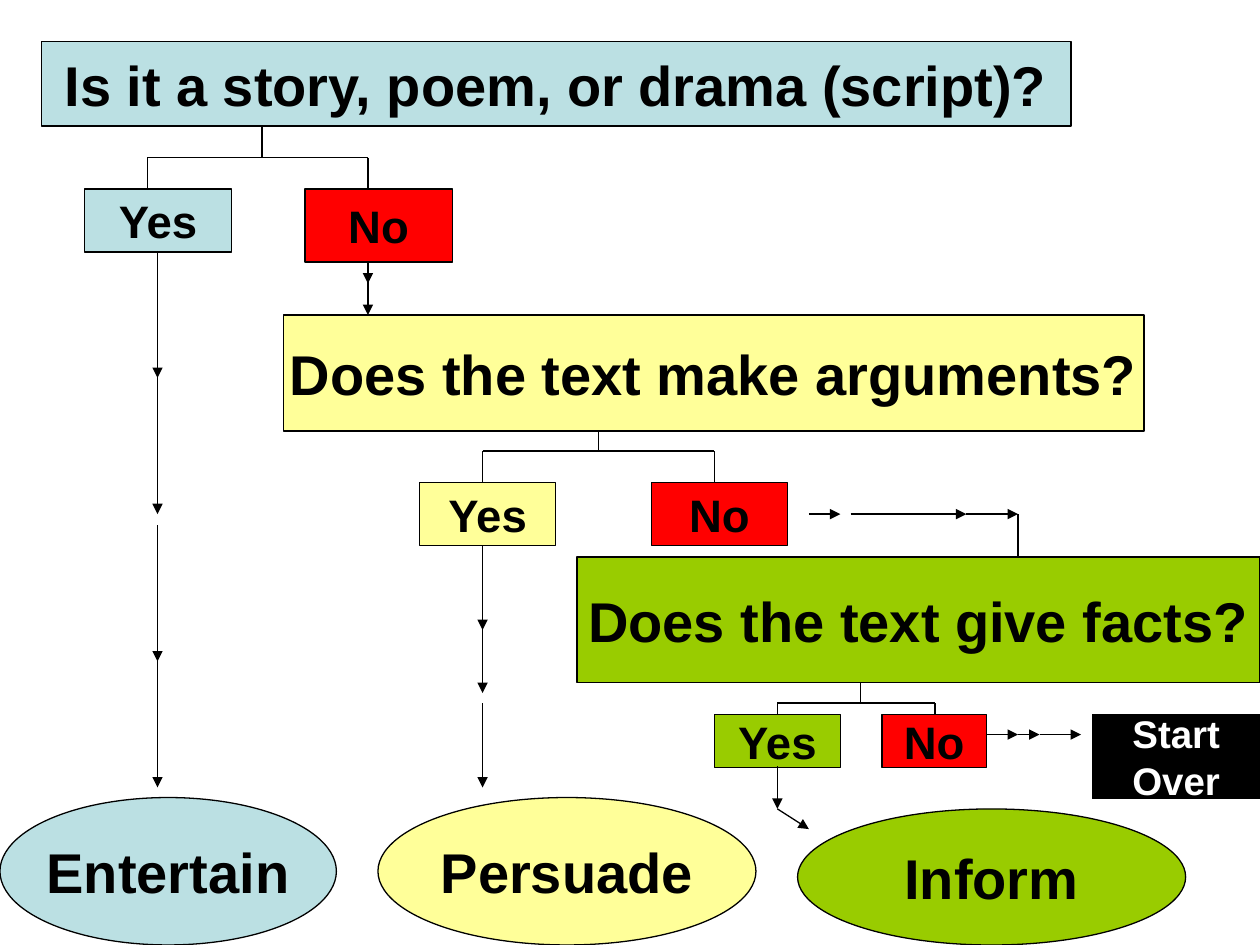
from lxml import etree
from pptx import Presentation
from pptx.dml.color import RGBColor
from pptx.enum.shapes import MSO_CONNECTOR, MSO_SHAPE
from pptx.enum.text import MSO_ANCHOR, PP_ALIGN
from pptx.oxml.ns import qn
from pptx.util import Inches, Pt

BLUE, YELLOW, GREEN, RED = "BBE0E3", "FFFF99", "99CC00", "FF0000"
BLACK, WHITE = "000000", "FFFFFF"
RECT, OVAL = MSO_SHAPE.RECTANGLE, MSO_SHAPE.OVAL


def color(code):
    return RGBColor.from_string(code)


def link(x1, y1, x2, y2, arrow=False):
    line = slide.shapes.add_connector(
        MSO_CONNECTOR.STRAIGHT, Inches(x1), Inches(y1), Inches(x2), Inches(y2))
    line.line.color.rgb = color(BLACK)
    line.line.width = Pt(0.75)
    if arrow:
        etree.SubElement(line.line._get_or_add_ln(), qn("a:tailEnd"), type="triangle")
    etree.SubElement(line._element.spPr, qn("a:effectLst"))


prs = Presentation()
prs.slide_width, prs.slide_height = Inches(10), Inches(7.5)
slide = prs.slides.add_slide(prs.slide_layouts[6])

# Questions, answers and outcomes: kind, fill, size, place, lines of text
boxes = [
    (RECT, BLUE, 32, (0.33, 0.33, 8.17, 0.67), ["Is it a story, poem, or drama (script)?"]),
    (RECT, BLUE, 26, (0.67, 1.5, 1.17, 0.5), ["Yes"]),
    (RECT, RED, 26, (2.42, 1.5, 1.17, 0.58), ["No"]),
    (RECT, YELLOW, 32, (2.25, 2.5, 6.83, 0.92), ["Does the text make arguments?"]),
    (RECT, YELLOW, 26, (3.33, 3.83, 1.08, 0.5), ["Yes"]),
    (RECT, RED, 26, (5.17, 3.83, 1.08, 0.5), ["No"]),
    (RECT, GREEN, 32, (4.58, 4.42, 5.42, 1), ["Does the text give facts?"]),
    (RECT, GREEN, 26, (5.67, 5.67, 1, 0.42), ["Yes"]),
    (RECT, RED, 26, (7, 5.67, 0.83, 0.42), ["No"]),
    (RECT, BLACK, 22, (8.67, 5.67, 1.33, 0.67), ["Start", "Over"]),
    (OVAL, BLUE, 32, (0, 6.33, 2.67, 1.17), ["Entertain"]),
    (OVAL, YELLOW, 32, (3, 6.33, 3, 1.17), ["Persuade"]),
    (OVAL, GREEN, 32, (6.33, 6.42, 3.08, 1.08), ["Inform"]),
]
for kind, fill, size, place, words in boxes:
    box = slide.shapes.add_shape(kind, *[Inches(n) for n in place])
    box.shadow.inherit = False
    box.fill.solid()
    box.fill.fore_color.rgb = color(fill)
    box.line.color.rgb = color(BLACK)
    box.line.width = Pt(0.75)
    frame = box.text_frame
    frame.word_wrap = False
    frame.vertical_anchor = MSO_ANCHOR.MIDDLE
    for i, word in enumerate(words):
        para = frame.add_paragraph() if i else frame.paragraphs[0]
        para.alignment = PP_ALIGN.CENTER
        run = para.add_run()
        run.text = word
        run.font.name = "Arial"
        run.font.size = Pt(size)
        run.font.bold = True
        run.font.color.rgb = color(WHITE if fill == BLACK else BLACK)

# Forks from each question: stem, left and right x, then top, bar and foot y
forks = [
    (2.08, 1.17, 2.92, 1, 1.25, 1.5),
    (4.75, 3.83, 5.67, 3.42, 3.58, 3.83),
    (6.83, 6.17, 7.42, 5.42, 5.58, 5.67),
]
for stem, left, right, top, bar, foot in forks:
    link(stem, top, stem, bar)
    link(left, bar, right, bar)
    for x in (left, right):
        link(x, bar, x, foot)

# Arrows running down: x, then start and end y of each piece
falls = [
    (1.25, [(2, 4.08), (2.75, 3), (4.17, 6.25), (4.75, 5.25)]),
    (2.92, [(2.08, 2.5), (2.17, 2.25)]),
    (3.83, [(4.33, 5.5), (4.58, 5), (5.58, 6.25)]),
    (6.17, [(6.08, 6.42)]),
]
for x, parts in falls:
    for top, foot in parts:
        link(x, top, x, foot, True)

# Arrows running right: y, then start and end x of each piece
runs = [
    (4.08, [(6.42, 6.67), (6.75, 7.67), (7.67, 8.08)]),
    (5.83, [(7.83, 8.08), (8.08, 8.25), (8.25, 8.58)]),
]
for y, parts in runs:
    for left, right in parts:
        link(left, y, right, y, True)

# Drop to the facts question and slant to the last outcome
link(8.08, 4.08, 8.08, 4.42)
link(6.17, 6.42, 6.42, 6.58, True)

prs.save("out.pptx")
